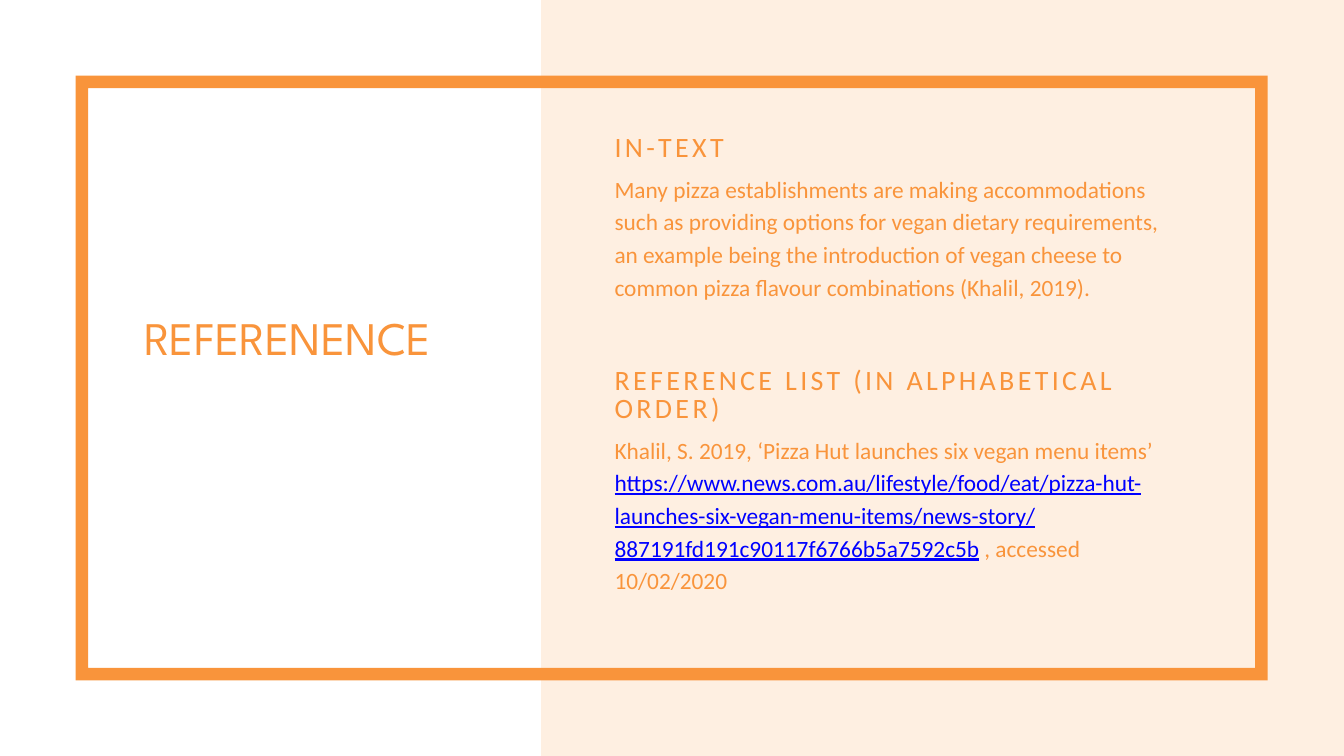
from lxml import etree
from pptx import Presentation
from pptx import util as u
from pptx.dml.color import RGBColor
from pptx.enum import shapes, text
from pptx.oxml.ns import qn

PX = u.Inches(1) // 96
COLORS = {"orange": "F9943B", "link": "0000FF"}
BODY_FONT = "Calibri"
COMPARISON_LAYOUT = 4

IN_TEXT = (
    "Many pizza establishments are making accommodations such as providing "
    "options for vegan dietary requirements, an example being the introduction "
    "of vegan cheese to common pizza flavour combinations (Khalil, 2019)."
)
REFERENCE = (
    "Khalil, S. 2019, ‘Pizza Hut launches six vegan menu items’ ",
    "https://www.news.com.au/lifestyle/food/eat/"
    "pizza-hut-launches-six-vegan-menu-items/news-story/"
    "887191fd191c90117f6766b5a7592c5b",
    " , accessed 10/02/2020",
)


def color(name):
    return RGBColor.from_string(COLORS[name])


def add_backdrop_shape(slide, kind, box, layer):
    """Add an orange shape at the given layer, behind the placeholders."""
    shape = slide.shapes.add_shape(kind, *(value * PX for value in box))
    shape.shadow.inherit = False
    shape.fill.solid()
    shape.fill.fore_color.rgb = color("orange")
    shape.line.fill.background()
    tree = shape.element.getparent()
    tree.insert(2 + layer, shape.element)
    return shape


def add_panel(slide, box):
    panel = add_backdrop_shape(slide, shapes.MSO_SHAPE.RECTANGLE, box, 0)
    fill = panel.element.spPr.find(qn("a:solidFill"))
    etree.SubElement(fill[0], qn("a:alpha"), val="15000")


def add_frame(slide, box, thickness):
    frame = add_backdrop_shape(slide, shapes.MSO_SHAPE.FRAME, box, 1)
    frame.adjustments[0] = thickness / min(box[2:])


def fill_placeholder(placeholder, box, parts, size, leading, font=BODY_FONT, tracking=0):
    """Place a placeholder and set its parts as one plain left-aligned paragraph."""
    placeholder.left, placeholder.top, placeholder.width, placeholder.height = (
        value * PX for value in box
    )
    frame = placeholder.text_frame
    frame.margin_left = frame.margin_top = frame.margin_right = frame.margin_bottom = 0
    frame.vertical_anchor = text.MSO_ANCHOR.TOP
    frame.auto_size = text.MSO_AUTO_SIZE.NONE
    frame.word_wrap = True
    frame.text = parts[0]
    paragraph = frame.paragraphs[0]
    for part in parts[1:]:
        paragraph.add_run().text = part
    paragraph.alignment = text.PP_ALIGN.LEFT
    paragraph.line_spacing = u.Pt(leading)
    paragraph.space_before = u.Pt(0)
    properties = paragraph._p.get_or_add_pPr()
    properties.set("marL", "0")
    properties.set("indent", "0")
    etree.SubElement(properties, qn("a:buNone"))
    for run in paragraph.runs:
        run.font.name = font
        run.font.size = u.Pt(size)
        run.font.bold = False
        run.font.color.rgb = color("orange")
        if tracking:
            run._r.get_or_add_rPr().set("spc", str(tracking))
    return paragraph


def add_section(heading, body, box, heading_height, heading_text, body_parts):
    """Fill a box with a tracked heading above its body text."""
    left, top, width, height = box
    body_top = heading_height + 5
    fill_placeholder(heading, (left, top, width, heading_height), [heading_text],
                     30, 30, tracking=360)
    return fill_placeholder(body, (left, top + body_top, width, height - body_top),
                            body_parts, 25, 35)


def build_reference_slide(presentation):
    slide = presentation.slides.add_slide(presentation.slide_layouts[COMPARISON_LAYOUT])
    add_panel(slide, (773, -56, 1214, 1190))
    add_frame(slide, (108, 108, 1703, 864), 18)

    title, *section_parts = slide.placeholders
    fill_placeholder(title, (206, 448, 510, 76), ["REFERENENCE"], 50, 55,
                     font="League Spartan")

    add_section(*section_parts[:2], (878, 193, 807, 232), 45, "IN-TEXT", [IN_TEXT])
    citation = add_section(*section_parts[2:], (878, 526, 807, 364), 85,
                           "REFERENCE LIST (IN ALPHABETICAL ORDER)", REFERENCE)
    address = citation.runs[1]
    address.font.color.rgb = color("link")
    address.font.underline = True


def main():
    presentation = Presentation()
    presentation.slide_width = 1920 * PX
    presentation.slide_height = 1080 * PX
    build_reference_slide(presentation)
    presentation.save("out.pptx")


if __name__ == "__main__":
    main()
